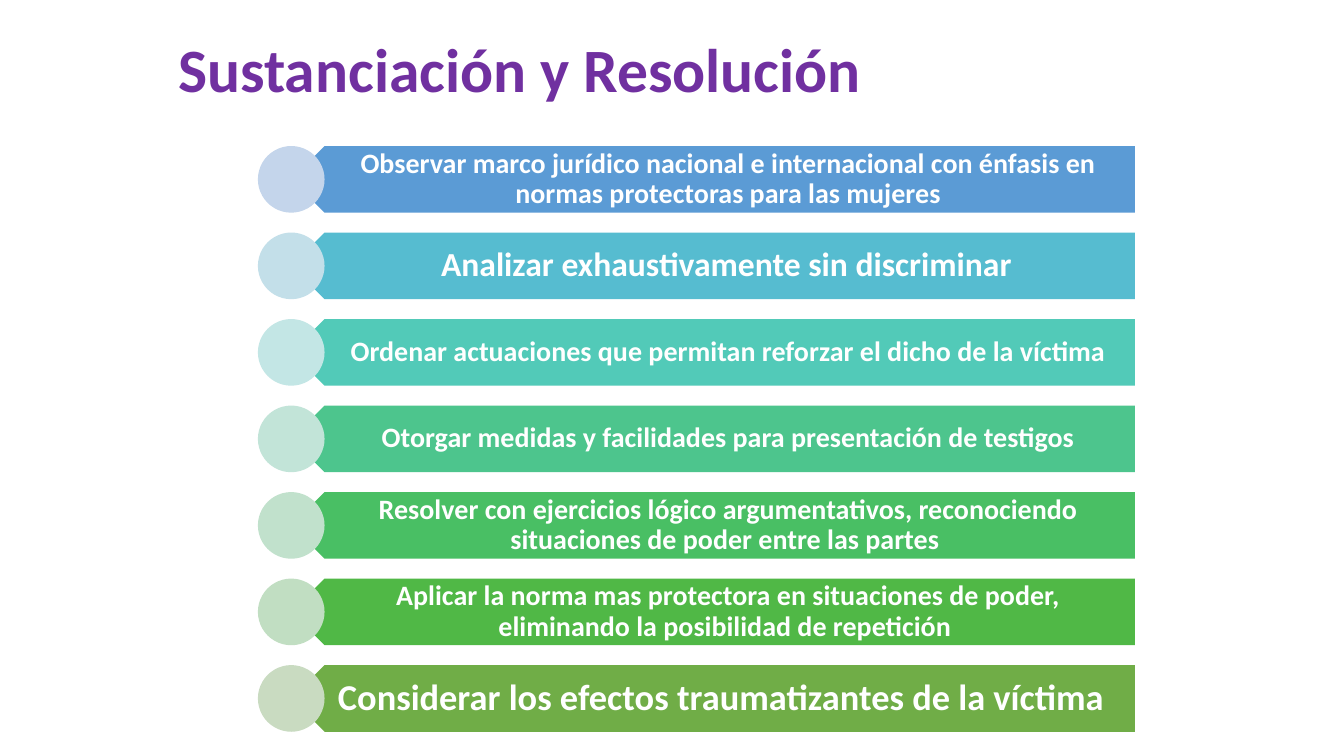
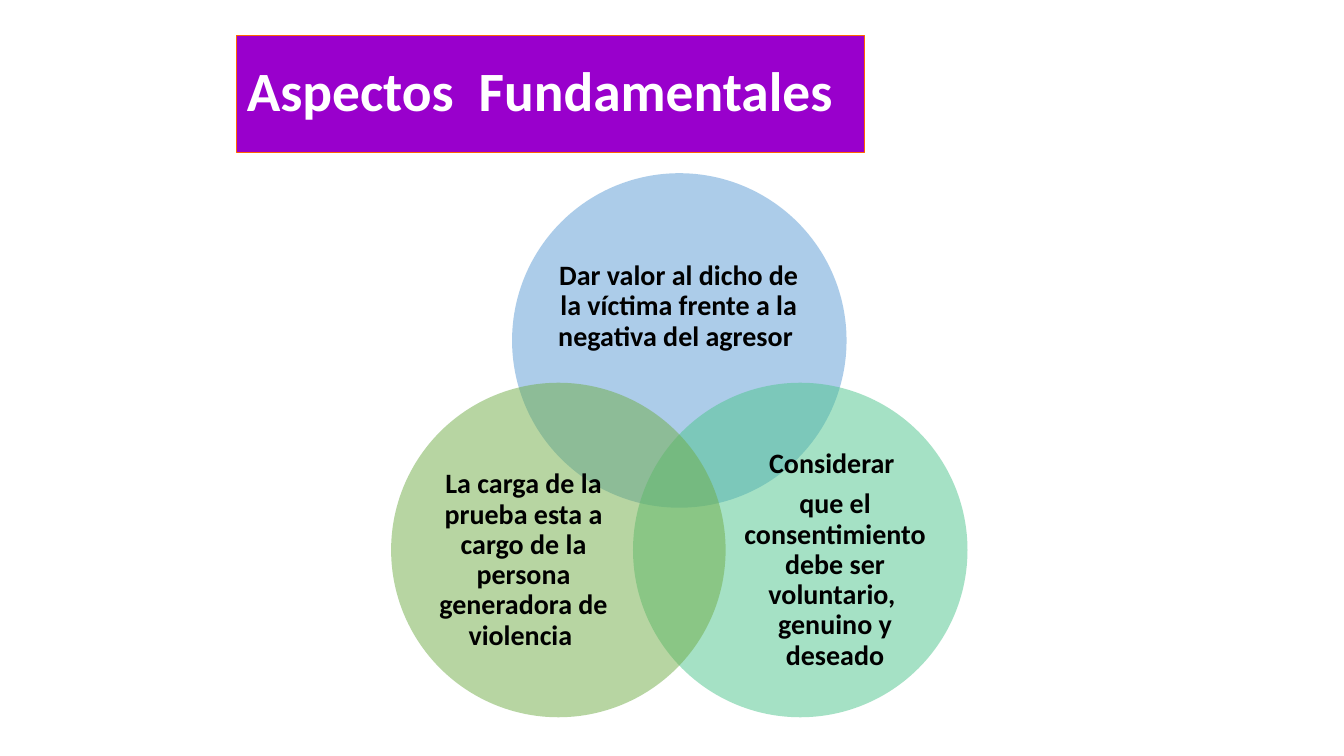
import math
from dataclasses import dataclass

import pptx
import pptx.dml.color
import pptx.enum.shapes
import pptx.enum.text
import pptx.oxml
import pptx.oxml.ns
import pptx.util

Cm = pptx.util.Cm
Pt = pptx.util.Pt
Align = pptx.enum.text.PP_ALIGN
Shape = pptx.enum.shapes.MSO_SHAPE


@dataclass(frozen=True)
class Theme:
    font: str = "Calibri"
    white: str = "FFFFFF"
    black: str = "000000"
    purple: str = "7030A0"
    violet: str = "9900CC"
    orange: str = "FF6600"
    heading: float = 44
    banner: float = 39.6
    body: float = 20
    large: float = 24
    largest: float = 26


THEME = Theme()

STEPS_TITLE = "Sustanciación y Resolución"
STEPS = [
    ("Observar marco jurídico nacional e internacional con énfasis en normas protectoras para las mujeres",
     THEME.body, "5B9BD5", "C4D5EB"),
    ("Analizar exhaustivamente sin discriminar", THEME.large, "56BCD0", "C3DFE9"),
    ("Ordenar actuaciones que permitan reforzar el dicho de la víctima",
     THEME.body, "52CAB8", "C3E6E5"),
    ("Otorgar medidas y facilidades para presentación de testigos",
     THEME.body, "4DC58D", "C2E4D8"),
    ("Resolver con ejercicios lógico argumentativos, reconociendo situaciones de poder entre las partes ",
     THEME.body, "49BF64", "C1E1CC"),
    ("Aplicar la norma mas protectora en situaciones de poder, eliminando la posibilidad de repetición ",
     THEME.body, "50B846", "C1DEC2"),
    ("Considerar los efectos traumatizantes de la víctima ", THEME.largest, "70AD47", "C9DBC1"),
]

ASPECTS_TITLE = "Aspectos  Fundamentales"
ASPECTS = [
    (["Dar valor al dicho de la víctima frente a la negativa del agresor "],
     "5B9BD5", (14.02, 5.84, 6.17, 3.78)),
    (["Considerar ", "que el consentimiento debe ser voluntario,  genuino y deseado"],
     "4DC58D", (18.52, 11.81, 5.05, 4.62)),
    (["La carga de la prueba esta a cargo de la persona generadora de violencia "],
     "70AD47", (10.67, 11.81, 5.05, 4.62)),
]


def rgb(color):
    return pptx.dml.color.RGBColor.from_string(color)


def write(shape, paragraphs, size, color, align=Align.CENTER, insets=(0, 0, 0, 0), after=0.35):
    frame = shape.text_frame
    frame.word_wrap = True
    frame.auto_size = pptx.enum.text.MSO_AUTO_SIZE.NONE
    frame.vertical_anchor = pptx.enum.text.MSO_ANCHOR.MIDDLE
    frame.margin_left, frame.margin_top, frame.margin_right, frame.margin_bottom = map(Cm, insets)
    for index, text in enumerate(paragraphs):
        para = frame.add_paragraph() if index else frame.paragraphs[0]
        para.alignment = align
        para.line_spacing = 0.9
        para.space_before = Pt(0)
        para.space_after = Pt(size * after)
        span = para.add_run()
        span.text = text
        span.font.name = THEME.font
        span.font.size = Pt(size)
        span.font.bold = True
        span.font.color.rgb = rgb(color)


def add_slide(deck, title, place, size, color):
    page = deck.slides.add_slide(deck.slide_layouts[5])
    box = page.shapes.title
    box.left, box.top, box.width, box.height = map(Cm, place)
    write(box, [title], size, color, align=Align.LEFT, insets=(0.25, 0.13, 0.25, 0.13), after=0)
    return page


def add_filled(page, kind, place, color, opacity=100):
    shape = page.shapes.add_shape(kind, *map(Cm, place))
    shape.shadow.inherit = False
    shape.fill.solid()
    shape.fill.fore_color.rgb = rgb(color)
    shape.line.fill.background()
    if opacity < 100:
        tint = shape.element.spPr.find(".//" + pptx.oxml.ns.qn("a:srgbClr"))
        alpha = pptx.oxml.parse_xml(f'<a:alpha {pptx.oxml.ns.nsdecls("a")} val="{opacity * 1000}"/>')
        tint.append(alpha)
    return shape


def build_steps(deck):
    page = add_slide(deck, STEPS_TITLE, (4.24, 0, 21.89, 3.68), THEME.heading, THEME.purple)
    left, top, height, pitch, width = 6.5, 3.68, 1.68, 2.18, 21.26
    for index, (text, size, color, dot_color) in enumerate(STEPS):
        row = top + index * pitch
        arrow = add_filled(page, Shape.PENTAGON, (left + height / 2, row, width, height), color)
        arrow.element.spPr.xfrm.set("flipH", "1")
        write(arrow, [text], size, THEME.white,
              insets=(0.74, size * 0.01, size * 0.02, size * 0.01))
        add_filled(page, Shape.OVAL, (left, row, height, height), dot_color)


def build_aspects(deck):
    page = add_slide(deck, ASPECTS_TITLE, (5.97, 0.89, 15.82, 2.95), THEME.banner, THEME.white)
    banner = page.shapes.title
    banner.fill.solid()
    banner.fill.fore_color.rgb = rgb(THEME.violet)
    banner.line.color.rgb = rgb(THEME.orange)
    banner.line.width = Pt(0.75)

    center_x, center_y, reach, diameter = 17.12, 12.1, 3.52, 8.43
    for index, (paragraphs, color, place) in enumerate(ASPECTS):
        angle = math.radians(index * 360 / len(ASPECTS) - 90)
        left = center_x + reach * math.cos(angle) - diameter / 2
        top = center_y + reach * math.sin(angle) - diameter / 2
        add_filled(page, Shape.OVAL, (left, top, diameter, diameter), color, opacity=50)
        label = page.shapes.add_textbox(*map(Cm, place))
        write(label, paragraphs, THEME.body, THEME.black)


def main():
    deck = pptx.Presentation()
    deck.slide_width = Cm(33.87)
    deck.slide_height = Cm(19.05)
    build_steps(deck)
    build_aspects(deck)
    deck.save("out.pptx")


if __name__ == "__main__":
    main()
